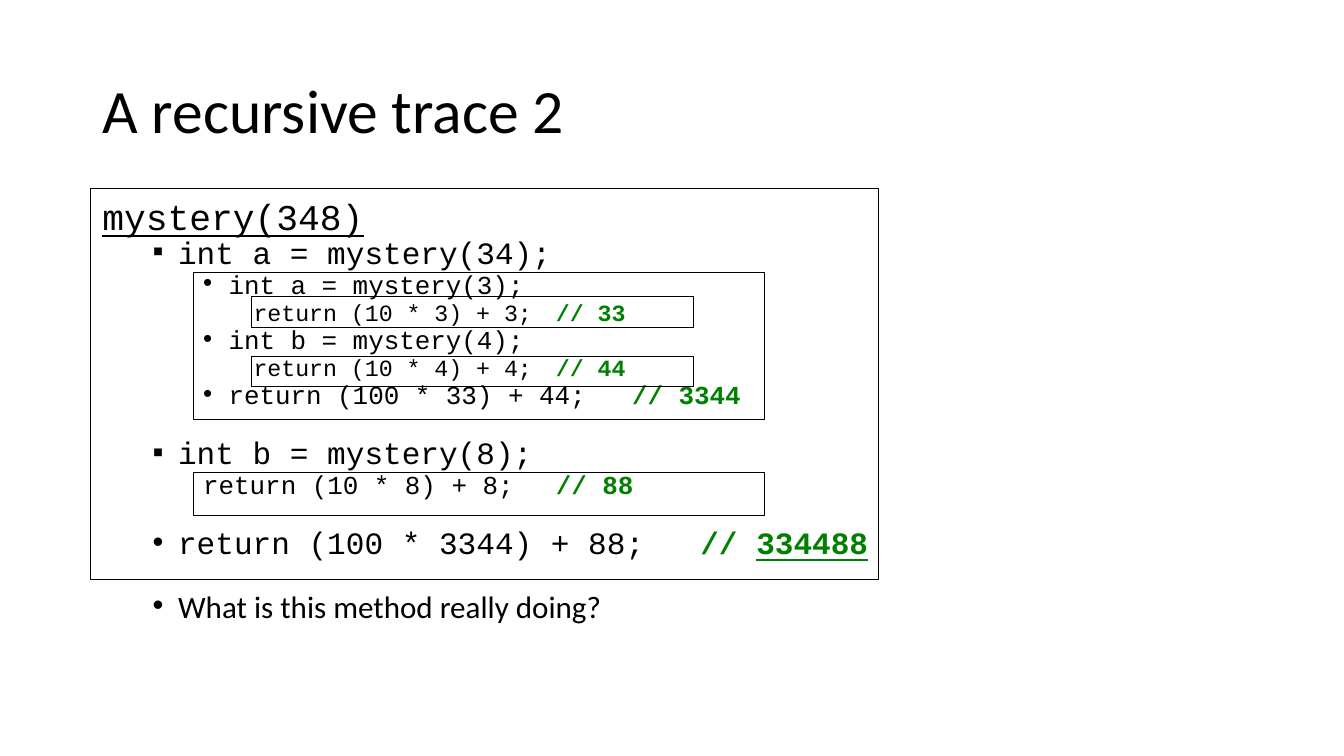
from lxml import etree
from pptx import Presentation
from pptx.dml.color import RGBColor
from pptx.enum.shapes import MSO_SHAPE
from pptx.enum.text import MSO_ANCHOR
from pptx.oxml.ns import qn
from pptx.util import Cm, Pt

RECT = MSO_SHAPE.RECTANGLE
TOP, MIDDLE = MSO_ANCHOR.TOP, MSO_ANCHOR.MIDDLE
BLACK, GREEN = "000000", "008000"
SANS, MONO = "Calibri", "Courier New"
SIZES = [25.9, 22.2, 18.5, 16.6]  # text size by outline level


def rgb(value):
    return RGBColor.from_string(value)


class Deck:
    def __init__(self):
        self.prs = Presentation()
        self.prs.slide_width, self.prs.slide_height = Cm(33.87), Cm(19.05)
        self.s = self.prs.slides.add_slide(self.prs.slide_layouts[6])

    def text_box(self, x, y, w, h, anchor=TOP):
        tf = self.s.shapes.add_textbox(Cm(x), Cm(y), Cm(w), Cm(h)).text_frame
        tf.word_wrap = True
        tf.vertical_anchor = anchor
        return tf

    def run(self, p, text, size, font=MONO, color=BLACK, bold=False, underline=False):
        r = p.add_run()
        r.text = text
        r.font.size, r.font.name = Pt(size), font
        r.font.bold, r.font.underline = bold, underline
        r.font.color.rgb = rgb(color)

    def paragraph(self, tf, level=0, before=5, spacing=0.7, bullet=None, tab=None):
        p = tf.paragraphs[0]
        if p.runs:
            p = tf.add_paragraph()
        p.level, p.line_spacing, p.space_before = level, spacing, Pt(before)
        pPr = p._p.get_or_add_pPr()
        if bullet:
            pPr.set("marL", str(Cm(0.64 + 1.27 * level)))
            pPr.set("indent", str(Cm(-0.64)))
            etree.SubElement(pPr, qn("a:buFont")).set("typeface", "Arial")
            etree.SubElement(pPr, qn("a:buChar")).set("char", bullet)
        else:
            pPr.set("marL", str(Cm(1.27 * level)))
            pPr.set("indent", "0")
            etree.SubElement(pPr, qn("a:buNone"))
        if tab:
            stop = etree.SubElement(etree.SubElement(pPr, qn("a:tabLst")), qn("a:tab"))
            stop.set("pos", str(Cm(tab)))
            stop.set("algn", "l")
        return p

    def code(self, tf, level, text, bullet=None, comment=(), tab=None, before=5):
        p = self.paragraph(tf, level, before, bullet=bullet, tab=tab)
        self.run(p, text + ("\t" if comment else ""), SIZES[level], underline=level == 0)
        for i, part in enumerate(comment):
            self.run(p, part, SIZES[level], color=GREEN, bold=True, underline=i == 1)

    def frame(self, x, y, w, h):
        sp = self.s.shapes.add_shape(RECT, Cm(x), Cm(y), Cm(w), Cm(h))
        sp.shadow.inherit = False
        sp.fill.background()
        sp.line.color.rgb = rgb(BLACK)
        sp.line.width = Pt(0.75)


def main():
    d = Deck()

    # Title
    tf = d.text_box(2.33, 1.01, 29.21, 3.68, MIDDLE)
    d.run(d.paragraph(tf, before=0, spacing=0.9), "A recursive trace 2", 44, SANS)

    # Call trace
    tf = d.text_box(2.33, 5.07, 29.21, 12.09)
    d.code(tf, 0, "mystery(348)", before=10)
    d.code(tf, 1, "int a = mystery(34);", "▪")
    for name, n in (("a", 3), ("b", 4)):
        d.code(tf, 2, f"int {name} = mystery({n});", "•")
        d.code(tf, 3, f"return (10 * {n}) + {n};", comment=[f"// {n}{n}"], tab=11.93)
    d.code(tf, 2, "return (100 * 33) + 44;", "•", ["// 3344"], 13.35)
    d.code(tf, 1, "int b = mystery(8);", "▪", before=25)
    d.code(tf, 2, "return (10 * 8) + 8;", comment=["// 88"], tab=13.1)
    d.code(tf, 1, "return (100 * 3344) + 88;", "•", ["// ", "334488"], 15.07, before=25)

    # Closing question
    p = d.paragraph(tf, 1, 27, bullet="•")
    d.run(p, "What is this method really doing?", SIZES[1], SANS)

    # One frame per call
    for box in ((4.88, 6.86, 14.4, 3.71), (4.88, 11.91, 14.4, 1.07),
                (6.35, 7.47, 11.13, 0.79), (6.35, 8.99, 11.13, 0.74),
                (2.29, 4.75, 19.86, 9.86)):
        d.frame(*box)

    d.prs.save("out.pptx")


if __name__ == "__main__":
    main()
